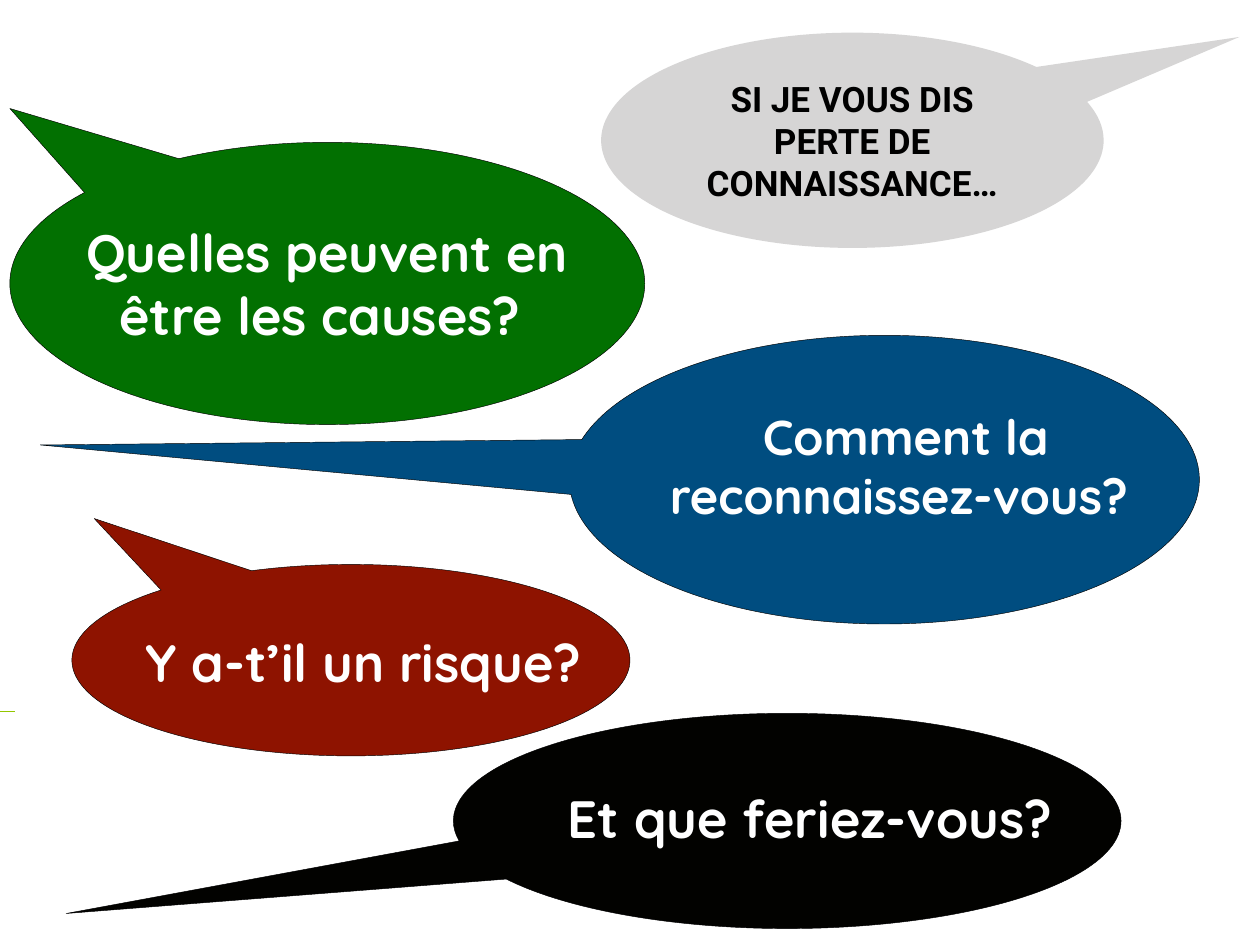
from pptx import Presentation
from pptx.dml.color import RGBColor
from pptx.enum import shapes, text
from pptx.oxml.ns import qn
from pptx.util import Cm, Pt
from lxml import etree

BLACK = RGBColor(0x00, 0x00, 0x00)
WHITE = RGBColor(0xFF, 0xFF, 0xFF)
INK = RGBColor(0x02, 0x02, 0x00)
RED = RGBColor(0x8E, 0x13, 0x00)
GREEN = RGBColor(0x02, 0x70, 0x01)
BLUE = RGBColor(0x00, 0x4D, 0x80)
GREY = RGBColor(0xD6, 0xD5, 0xD5)
LIME = RGBColor(0x94, 0xC6, 0x00)


def add_bubble(parent, box, tail, fill):
    """Add an unoutlined speech bubble; tail is its tip relative to the centre."""
    sp = parent.add_shape(shapes.MSO_SHAPE.OVAL_CALLOUT, *map(Cm, box))
    sp.adjustments[0], sp.adjustments[1] = tail
    sp.shadow.inherit = False
    sp.fill.solid()
    sp.fill.fore_color.rgb = fill
    sp.line.fill.background()
    return sp


def write_centred(sp, lines, font, size, color):
    tf = sp.text_frame
    tf.word_wrap = True
    tf.auto_size = text.MSO_AUTO_SIZE.NONE
    tf.vertical_anchor = text.MSO_ANCHOR.MIDDLE
    tf.margin_left = tf.margin_right = tf.margin_top = tf.margin_bottom = Cm(0.1)
    tf.text = lines
    for p in tf.paragraphs:
        p.alignment = text.PP_ALIGN.CENTER
        p.line_spacing = 1.0
        p.space_before = Pt(0)
        for r in p.runs:
            r.font.name = font
            r.font.size = Pt(size)
            r.font.bold = True
            r.font.color.rgb = color


prs = Presentation()
prs.slide_width, prs.slide_height = Cm(25.4), Cm(19.05)
s = prs.slides.add_slide(prs.slide_layouts[5])

rule = s.shapes.add_connector(
    shapes.MSO_CONNECTOR.STRAIGHT, Cm(0.3), Cm(14.33), Cm(0), Cm(14.33))
rule.line.color.rgb = LIME
rule.line.width = Pt(0.25)
etree.SubElement(rule._element.spPr, qn("a:effectLst"))

# bubble box, tail tip, fill, text box, wording, text size
questions = [
    ((9.14, 14.38, 13.46, 4.34), (-1.08, 0.43), INK,
     (10.97, 15.42, 10.72, 2.11), "Et que feriez-vous?", 30),
    ((1.45, 11.38, 11.25, 3.86), (-0.46, -0.74), RED,
     (2.06, 11.73, 10.54, 3.23), "Y a-t’il un risque?", 30),
    ((0.2, 2.87, 12.8, 5.69), (-0.5, -0.62), GREEN,
     (1.14, 3.78, 10.92, 3.86), "Quelles peuvent en être les causes? ", 30),
    ((11.48, 6.76, 12.7, 5.82), (-1.34, -0.12), BLUE,
     (11.53, 6.99, 13.46, 4.78), " Comment la \nreconnaissez-vous? ", 28),
]
for box, tail, fill, text_box, wording, size in questions:
    group = s.shapes.add_group_shape()
    bubble = add_bubble(group.shapes, box, tail, fill)
    bubble.line.color.rgb = BLACK
    bubble.line.width = Pt(0.25)
    label = group.shapes.add_textbox(*map(Cm, text_box))
    write_centred(label, wording, "Quicksand", size, WHITE)

add_bubble(s.shapes, (12.12, 0.66, 10.13, 4.34), (0.77, -0.48), GREY)
title = s.shapes.title
title.left, title.top, title.width, title.height = map(Cm, (13.6, 1.3, 7.16, 3.07))
write_centred(title, "SI JE VOUS DIS PERTE DE CONNAISSANCE…", "Roboto", 20, BLACK)
s.shapes._spTree.append(title._element)  # bring the title in front of its bubble

prs.save("out.pptx")
